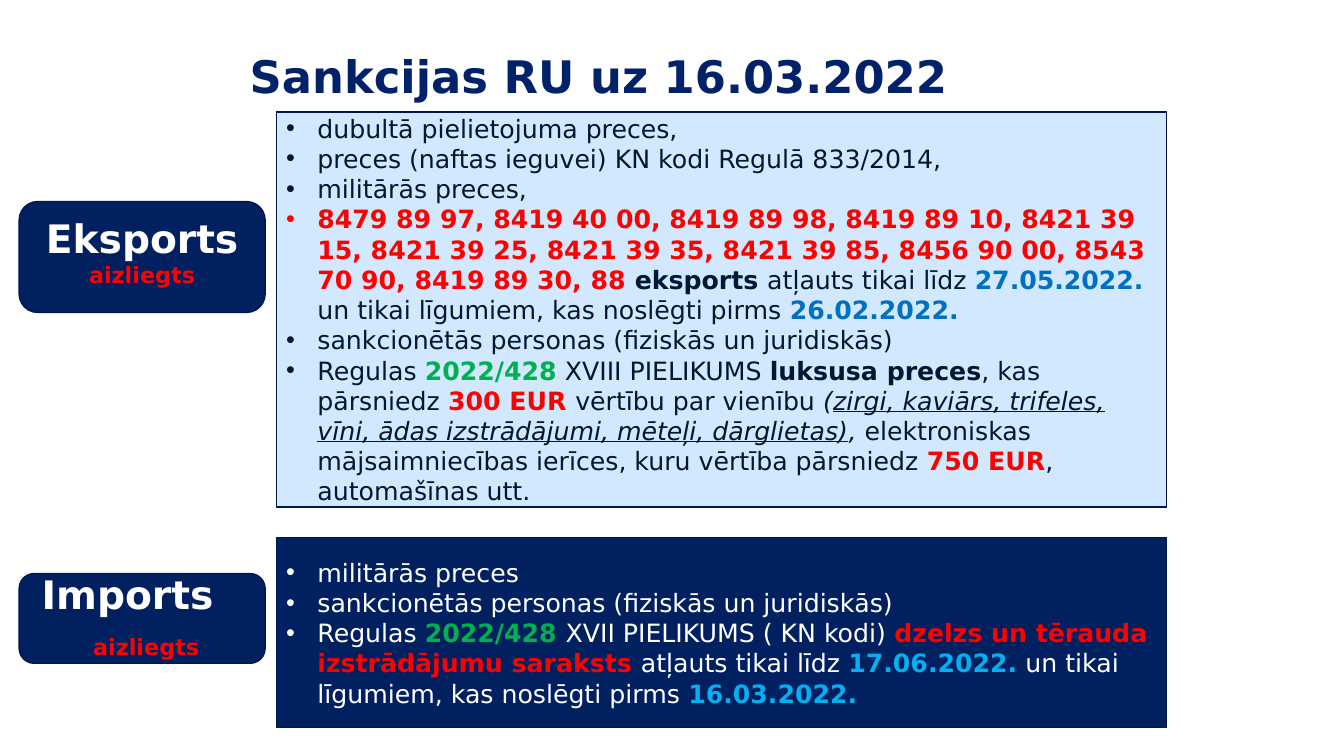
from lxml import etree
from pptx import Presentation
from pptx.dml.color import RGBColor
from pptx.enum.shapes import MSO_SHAPE
from pptx.enum.text import MSO_ANCHOR, PP_ALIGN
from pptx.oxml.ns import qn
from pptx.util import Inches, Pt

RECTANGLE, ROUNDED = MSO_SHAPE.RECTANGLE, MSO_SHAPE.ROUNDED_RECTANGLE
LEFT, CENTER, MIDDLE = PP_ALIGN.LEFT, PP_ALIGN.CENTER, MSO_ANCHOR.MIDDLE

FONT = "DejaVu Sans"
NAVY, OUTLINE, PALE, INK, WHITE = "002060", "001847", "D1E8FF", "001933", "FFFFFF"
TITLE_BLUE, RED, GREEN = "012269", "FF0000", "00B050"
DATE_BLUE, DATE_CYAN = "0070C0", "00B0F0"

TITLE = "Sankcijas RU uz 16.03.2022"
BANNED = "aizliegts"

# Each paragraph is a list of spans: (text, style letters, colour or None for the panel's own)
EXPORT_ITEMS = [
    [("dubultā pielietojuma preces,", "", None)],
    [("preces (naftas ieguvei) KN kodi Regulā 833/2014,", "", None)],
    [("militārās preces,", "", None)],
    [("8479 89 97, 8419 40 00, 8419 89 98, 8419 89 10, 8421 39 15, 8421 39 25, "
      "8421 39 35, 8421 39 85, 8456 90 00, 8543 70 90, 8419 89 30, 88 ", "b", RED),
     ("eksports ", "b", None),
     ("atļauts tikai līdz ", "", None),
     ("27.05.2022. ", "b", DATE_BLUE),
     ("un tikai līgumiem, kas noslēgti pirms ", "", None),
     ("26.02.2022.", "b", DATE_BLUE)],
    [("sankcionētās personas (fiziskās un juridiskās)", "", None)],
    [("Regulas ", "", None),
     ("2022/428", "b", GREEN),
     (" XVIII PIELIKUMS ", "", None),
     ("luksusa preces", "b", None),
     (", kas pārsniedz ", "", None),
     ("300 EUR ", "b", RED),
     ("vērtību par vienību ", "", None),
     ("(", "i", None),
     ("zirgi, kaviārs, trifeles, vīni, ādas izstrādājumi, mēteļi, dārglietas)", "iu", None),
     (", ", "i", None),
     ("elektroniskas mājsaimniecības ierīces, kuru vērtība pārsniedz ", "", None),
     ("750 EUR", "b", RED),
     (", automašīnas utt.", "", None)],
]
IMPORT_ITEMS = [
    [("militārās preces", "", None)],
    [("sankcionētās personas (fiziskās un juridiskās)", "", None)],
    [("Regulas ", "", None),
     ("2022/428 ", "b", GREEN),
     ("XVII PIELIKUMS ( KN kodi) ", "", None),
     ("dzelzs un tērauda izstrādājumu saraksts ", "b", RED),
     ("atļauts tikai līdz ", "", None),
     ("17.06.2022.", "b", DATE_CYAN),
     (" un tikai līgumiem, kas noslēgti pirms ", "", None),
     ("16.03.2022.", "b", DATE_CYAN)],
]

LABEL_LEFT, LABEL_WIDTH = 0.19, 2.44
PANEL_LEFT, PANEL_WIDTH = 2.74, 8.83
INDENT = 0.31
# top, height, fill, text colour, items
PANELS = [(1.11, 3.92, PALE, INK, EXPORT_ITEMS),
          (5.33, 1.89, NAVY, WHITE, IMPORT_ITEMS)]
# top, height, name, alignment, left inset, bottom inset, line spacing, gap in points
LABELS = [(2, 1.1, "Eksports", CENTER, 0.1, 0.17, 1.0, 0),
          (5.69, 0.89, "Imports", LEFT, 0.18, 0.05, 0.9, 13)]


def color(hex_code):
    return RGBColor.from_string(hex_code)


def add_span(para, text, size, hex_code, style=""):
    """Append a run; style letters are b(old), i(talic), u(nderline)."""
    span = para.add_run()
    span.text = text
    font = span.font
    font.name, font.size = FONT, Pt(size)
    font.color.rgb = color(hex_code)
    font.bold, font.italic, font.underline = ("b" in style, "i" in style, "u" in style)


def add_box(page, kind, left, top, width, height, fill):
    box = page.shapes.add_shape(kind, *map(Inches, (left, top, width, height)))
    box.shadow.inherit = False
    box.fill.solid()
    box.fill.fore_color.rgb = color(fill)
    box.line.color.rgb = color(OUTLINE)
    box.line.width = Pt(1)
    box.text_frame.word_wrap = True
    box.text_frame.vertical_anchor = MIDDLE
    return box


def add_bullet(para):
    properties = para._p.get_or_add_pPr()
    properties.set("marL", str(Inches(INDENT)))
    properties.set("indent", str(-Inches(INDENT)))
    etree.SubElement(properties, qn("a:buFont")).set("typeface", "Arial")
    etree.SubElement(properties, qn("a:buChar")).set("char", "•")


def add_title(page):
    box = page.shapes.add_textbox(*map(Inches, (0.19, 0.29, 11.5, 0.99)))
    frame = box.text_frame
    frame.word_wrap = True
    frame.vertical_anchor = MIDDLE
    para = frame.paragraphs[0]
    para.alignment = CENTER
    para.line_spacing = 0.9
    add_span(para, TITLE, 32, TITLE_BLUE, "b")


def add_panel(page, top, height, fill, text_color, items):
    box = add_box(page, RECTANGLE, PANEL_LEFT, top, PANEL_WIDTH, height, fill)
    frame = box.text_frame
    for index, spans in enumerate(items):
        para = frame.add_paragraph() if index else frame.paragraphs[0]
        para.alignment = LEFT
        add_bullet(para)
        for text, style, hex_code in spans:
            add_span(para, text, 18, hex_code or text_color, style)


def add_label(page, top, height, name, alignment, left_inset, bottom_inset, spacing, gap):
    box = add_box(page, ROUNDED, LABEL_LEFT, top, LABEL_WIDTH, height, NAVY)
    frame = box.text_frame
    frame.margin_left, frame.margin_bottom = Inches(left_inset), Inches(bottom_inset)
    heading, note = frame.paragraphs[0], frame.add_paragraph()
    heading.alignment, note.alignment = alignment, CENTER
    heading.line_spacing = note.line_spacing = spacing
    note.space_before = Pt(gap)
    add_span(heading, name, 28, WHITE, "b")
    add_span(note, BANNED, 16, RED, "b")


def main():
    deck = Presentation()
    deck.slide_width, deck.slide_height = Inches(13.33), Inches(7.5)
    page = deck.slides.add_slide(deck.slide_layouts[6])
    add_title(page)
    for panel in PANELS:
        add_panel(page, *panel)
    for label in LABELS:
        add_label(page, *label)
    deck.save("out.pptx")


if __name__ == "__main__":
    main()
